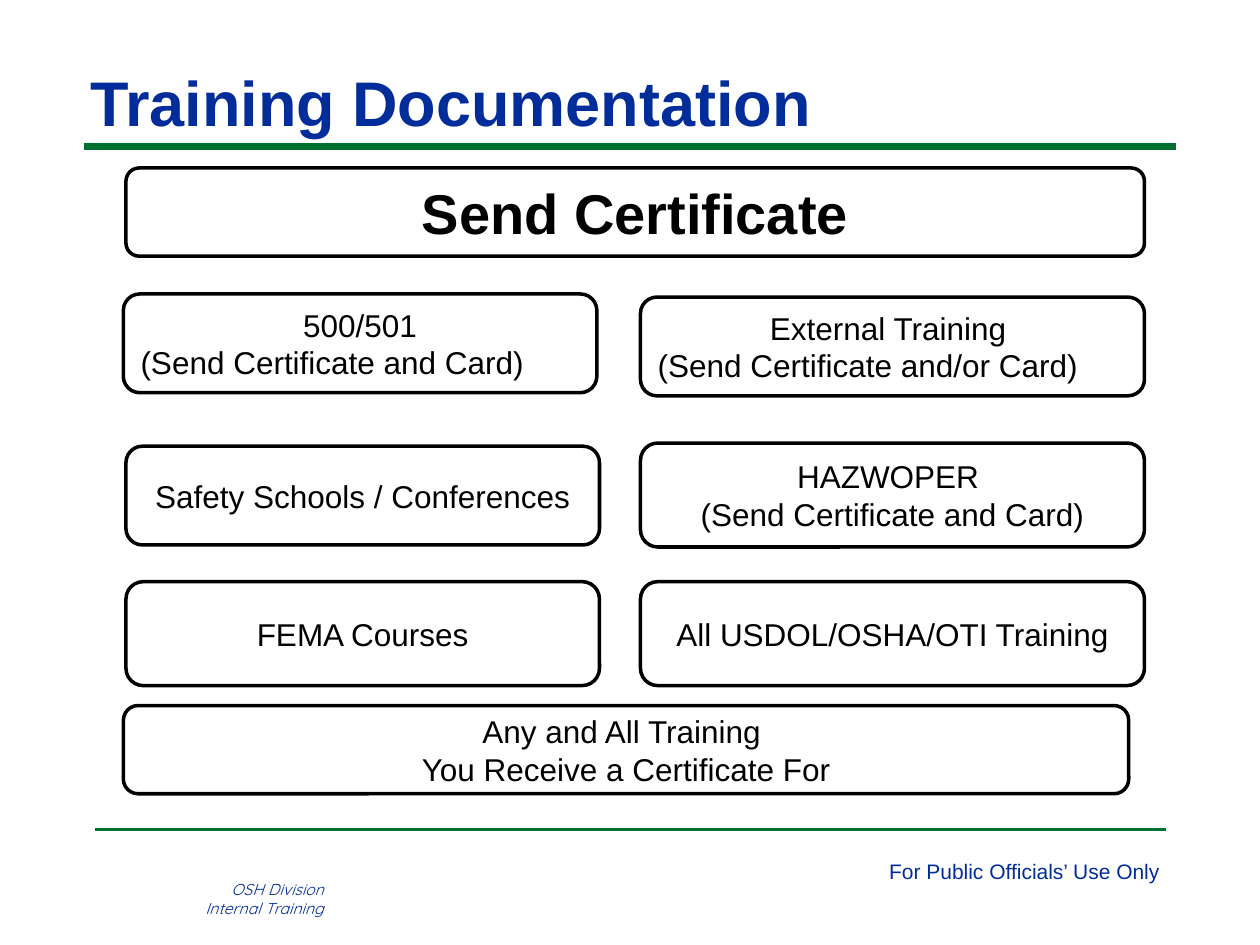
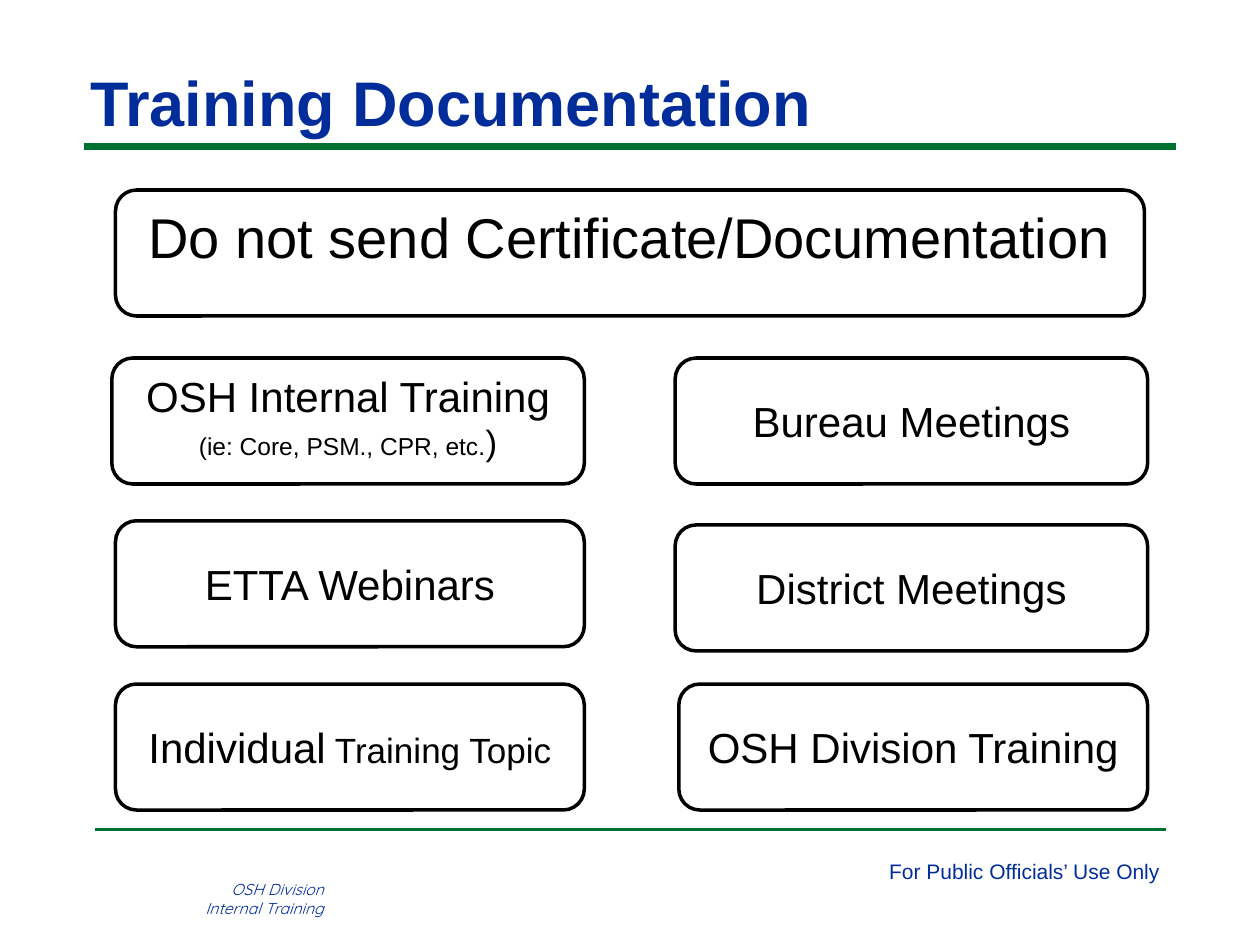
from dataclasses import dataclass

from lxml import etree
from pptx import Presentation
from pptx.dml.color import RGBColor
from pptx.enum.shapes import MSO_CONNECTOR, MSO_SHAPE
from pptx.enum.text import MSO_ANCHOR, MSO_AUTO_SIZE, PP_ALIGN
from pptx.oxml.ns import qn
from pptx.util import Inches, Pt

LEFT, CENTER, RIGHT = PP_ALIGN.LEFT, PP_ALIGN.CENTER, PP_ALIGN.RIGHT
TOP, MIDDLE, BOTTOM = MSO_ANCHOR.TOP, MSO_ANCHOR.MIDDLE, MSO_ANCHOR.BOTTOM
GROW = MSO_AUTO_SIZE.SHAPE_TO_FIT_TEXT
ROUNDED, STRAIGHT = MSO_SHAPE.ROUNDED_RECTANGLE, MSO_CONNECTOR.STRAIGHT
TITLE_ONLY = 5
COLUMNS, ROWS = 120, 90


@dataclass(frozen=True)
class Theme:
    blue: RGBColor = RGBColor(0x01, 0x2D, 0x9A)
    green: RGBColor = RGBColor(0x00, 0x70, 0x30)
    ink: RGBColor = RGBColor(0, 0, 0)
    paper: RGBColor = RGBColor(255, 255, 255)
    font: str = "Arial"
    unit_font: str = "Quicksand"
    title: int = 36
    banner: int = 32
    topic: int = 24
    aside: int = 20
    course: int = 18
    notice: int = 12
    unit: int = 9
    example: int = 14


THEME = Theme()


class Deck:
    """Builds slides on a grid of COLUMNS by ROWS cells."""

    def __init__(self, theme):
        self.theme = theme
        self.presentation = Presentation()
        self.presentation.slide_width = Inches(10)
        self.presentation.slide_height = Inches(7.5)
        self.column = self.presentation.slide_width / COLUMNS
        self.row = self.presentation.slide_height / ROWS
        self.slide = None

    def place(self, left, top, width, height):
        return (round(left * self.column), round(top * self.row),
                round(width * self.column), round(height * self.row))

    def set_lines(self, frame, lines, size, color, font=None, aligns=(LEFT,), **style):
        """Fill the frame; a line is a string or (text, size) runs, and the last align repeats."""
        for i, line in enumerate(lines):
            paragraph = frame.paragraphs[0] if i == 0 else frame.add_paragraph()
            paragraph.alignment = aligns[min(i, len(aligns) - 1)]
            paragraph.font.name = font or self.theme.font
            paragraph.font.size = Pt(size)
            paragraph.font.color.rgb = color
            paragraph.font.bold = style.get("bold", False)
            paragraph.font.italic = style.get("italic", False)
            for text, run_size in [(line, size)] if isinstance(line, str) else line:
                run = paragraph.add_run()
                run.text = text
                if run_size != size:
                    run.font.size = Pt(run_size)

    def rule(self, left, right, row, weight):
        x, y, length, _ = self.place(left, row, right - left, 0)
        line = self.slide.shapes.add_connector(STRAIGHT, x, y, x + length, y)
        line.line.color.rgb = self.theme.green
        line.line.width = Pt(weight)
        etree.SubElement(line._element.spPr, qn("a:effectLst"))

    def label(self, area, lines, size, wrap=True, **style):
        frame = self.slide.shapes.add_textbox(*self.place(*area)).text_frame
        frame.word_wrap = wrap
        frame.auto_size = GROW
        self.set_lines(frame, lines, size, self.theme.blue, **style)

    def title(self, text):
        title = self.slide.shapes.title
        title.left, title.top, title.width, title.height = self.place(8, 6, 104, 7.2)
        frame = title.text_frame
        frame.margin_left = frame.margin_right = Inches(0.05)
        frame.margin_top = frame.margin_bottom = 0
        frame.vertical_anchor = TOP
        frame.auto_size = GROW
        self.set_lines(frame, [text], self.theme.title, self.theme.blue, bold=True)

    def new_slide(self, title):
        layout = self.presentation.slide_layouts[TITLE_ONLY]
        self.slide = self.presentation.slides.add_slide(layout)
        self.rule(8, 112, 14, weight=4)
        self.rule(9, 111, 79, weight=2)
        self.label((83.5, 81.2, 28.5, 3.6), ["For Public Officials’ Use Only"],
                   self.theme.notice, wrap=False)
        self.label((14, 83.2, 18, 4.8), ["OSH Division", " Internal Training"],
                   self.theme.unit, font=self.theme.unit_font, aligns=(RIGHT,), italic=True)
        self.title(title)

    def card(self, area, lines, size, anchor=MIDDLE, aligns=(CENTER,), bold=False):
        card = self.slide.shapes.add_shape(ROUNDED, *self.place(*area))
        card.shadow.inherit = False
        card.fill.solid()
        card.fill.fore_color.rgb = self.theme.paper
        card.line.color.rgb = self.theme.ink
        card.line.width = Pt(2)
        card.text_frame.word_wrap = True
        card.text_frame.vertical_anchor = anchor
        self.set_lines(card.text_frame, lines, size, self.theme.ink, aligns=aligns, bold=bold)
        return card


def certificates_to_send(deck):
    deck.new_slide("Training Documentation")
    banner = deck.card((12, 16, 97, 8.4), ["Send Certificate"], THEME.banner,
                       anchor=BOTTOM, bold=True)
    banner.adjustments[0] = 0.15
    banner.text_frame.paragraphs[0].line_spacing = 1.5

    note_left = (CENTER, LEFT)
    left_width, right_column, right_width = 45.1, 61, 48
    courses = [
        ((11.75, 28, left_width, 9.4), ["500/501", "(Send Certificate and Card)"], note_left),
        ((right_column, 28.3, right_width, 9.4),
         ["External Training ", "(Send Certificate and/or Card)"], note_left),
        ((12, 42.5, left_width, 9.4), ["Safety Schools / Conferences"], (CENTER,)),
        ((12, 55.4, left_width, 9.9), ["FEMA Courses"], (CENTER,)),
        ((right_column, 42.2, right_width, 9.9),
         ["HAZWOPER ", "(Send Certificate and Card)"], (CENTER,)),
        ((right_column, 55.4, right_width, 9.9), ["All USDOL/OSHA/OTI Training"], (CENTER,)),
        ((11.75, 67.2, 95.75, 8.4),
         ["Any and All Training ", "You Receive a Certificate For"], (CENTER,)),
    ]
    for area, lines, aligns in courses:
        deck.card(area, lines, THEME.course, aligns=aligns)


def certificates_to_keep(deck):
    deck.new_slide("Training Documentation")
    height = 12
    deck.card((11, 18.1, 98, height), ["Do not send Certificate/Documentation"],
              THEME.banner, anchor=TOP)

    examples = [("(ie: Core, PSM., CPR, etc.", THEME.example), (")", THEME.aside)]
    individual = [("Individual", THEME.topic), (" Training Topic", THEME.aside)]
    topics = [
        (10.65, 34.1, 45, ["OSH Internal Training", examples], TOP),
        (64.3, 34.1, 45, ["Bureau Meetings"], MIDDLE),
        (64.3, 50, 45, ["District Meetings"], MIDDLE),
        (11, 49.6, 44.65, ["ETTA Webinars"], MIDDLE),
        (11, 65.15, 44.65, [individual], MIDDLE),
        (64.65, 65.15, 44.65, ["OSH Division Training"], MIDDLE),
    ]
    for left, top, width, lines, anchor in topics:
        deck.card((left, top, width, height), lines, THEME.topic, anchor=anchor)


def main():
    deck = Deck(THEME)
    certificates_to_send(deck)
    certificates_to_keep(deck)
    deck.presentation.save("out.pptx")


if __name__ == "__main__":
    main()
